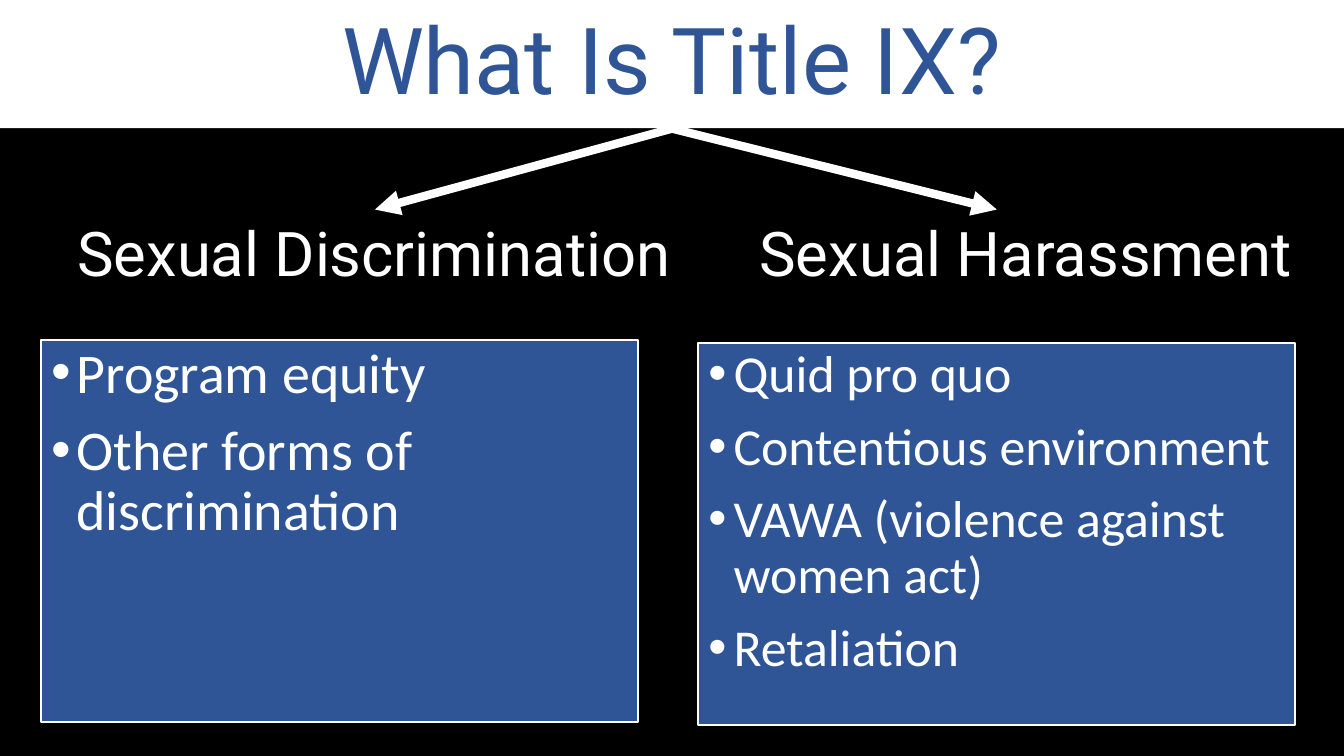
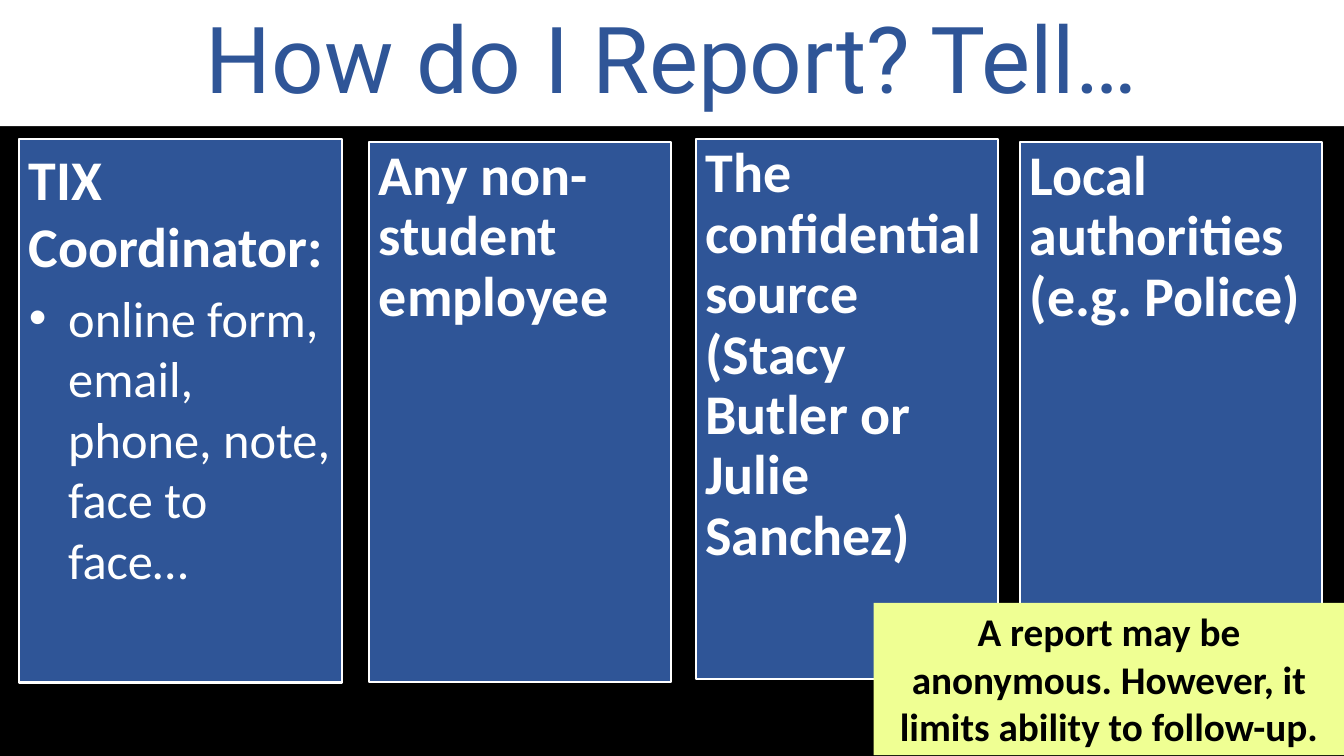
from pptx import Presentation
from pptx.dml.color import RGBColor
from pptx.enum.shapes import MSO_CONNECTOR, MSO_SHAPE
from pptx.enum.text import MSO_ANCHOR, PP_ALIGN
from pptx.oxml.ns import qn
from pptx.util import Cm, Pt
from lxml.etree import SubElement

BLACK = RGBColor(0x00, 0x00, 0x00)
WHITE = RGBColor(0xFF, 0xFF, 0xFF)
BLUE = RGBColor(0x2F, 0x55, 0x97)
LIME = RGBColor(0xEF, 0xFF, 0x93)
HEAD, BODY = "Roboto", "Calibri"
WIDE, HIGH = 33.87, 19.05

# Content: boxes are left, top, width, height in centimetres
TITLE = "What Is Title IX?"
TOPICS = [
    ("Sexual Discrimination", (1.27, 5.28, 16.33, 2.13), (9.45, 5.28),
     (1.04, 8.56, 15.04, 9.63), 40,
     ["Program equity", "Other forms of discrimination"]),
    ("Sexual Harassment", (18.59, 5.28, 14.53, 2.13), (25.12, 5.28),
     (17.6, 8.64, 15.04, 9.63), 37,
     ["Quid pro quo", "Contentious environment",
      "VAWA (violence against women act)", "Retaliation"]),
]
REPORT = "How do I Report? Tell…"
FIRST = "TIX Coordinator:"
WAYS = "online form, email, phone, note, face to face…"
PEOPLE = [
    (9.3, 3.58, "Any non-student employee"),
    (17.53, 3.51, "The confidential source (Stacy Butler or Julie Sanchez)"),
    (25.7, 3.58, "Local authorities (e.g. Police)"),
]
NOTE = "A report may be anonymous. However, it limits ability to follow-up."


def add_slide(deck):
    slide = deck.slides.add_slide(deck.slide_layouts[6])
    fill = slide.background.fill
    fill.solid()
    fill.fore_color.rgb = BLACK
    return slide


def add_box(slide, box, fill, edge=None):
    shape = slide.shapes.add_shape(MSO_SHAPE.RECTANGLE, *map(Cm, box))
    shape.shadow.inherit = False
    shape.fill.solid()
    shape.fill.fore_color.rgb = fill
    if edge is None:
        shape.line.fill.background()
    else:
        shape.line.color.rgb = edge
        shape.line.width = Pt(1.5)
    shape.text_frame.word_wrap = True
    shape.text_frame.vertical_anchor = MSO_ANCHOR.TOP
    return shape.text_frame


def add_text(frame, text, size, color=WHITE, font=BODY, bold=False,
             align=PP_ALIGN.LEFT, lead=0.9, after=0, hang=0):
    # The first paragraph of a new frame is still free
    para = frame.paragraphs[0]
    if para.runs:
        para = frame.add_paragraph()
    para.alignment = align
    para.line_spacing = lead
    para.space_after = Pt(after)
    run = para.add_run()
    run.text = text
    run.font.size = Pt(size)
    run.font.name = font
    run.font.bold = bold
    run.font.color.rgb = color
    if hang:
        props = para._p.get_or_add_pPr()
        props.set("marL", str(Cm(hang)))
        props.set("indent", str(-Cm(hang)))
        SubElement(props, qn("a:buFont")).set("typeface", "Arial")
        SubElement(props, qn("a:buChar")).set("char", "•")


def add_panel(slide, box):
    return add_box(slide, box, BLUE, WHITE)


def add_title(slide, text, high):
    frame = add_box(slide, (0, 0, WIDE, high), WHITE)
    frame.vertical_anchor = MSO_ANCHOR.MIDDLE
    add_text(frame, text, 66, BLUE, HEAD, align=PP_ALIGN.CENTER)


def add_arrow(slide, start, end):
    line = slide.shapes.add_connector(
        MSO_CONNECTOR.STRAIGHT, *map(Cm, start + end))
    line.line.color.rgb = WHITE
    line.line.width = Pt(6)
    SubElement(line.line._get_or_add_ln(), qn("a:tailEnd")).set(
        "type", "triangle")
    SubElement(line._element.spPr, qn("a:effectLst"))


def add_topics(deck):
    slide = add_slide(deck)
    for name, place, tip, box, size, items in TOPICS:
        panel = add_panel(slide, box)
        for item in items:
            add_text(panel, item, size, after=12, hang=0.64)
        label = slide.shapes.add_textbox(*map(Cm, place)).text_frame
        label.word_wrap = True
        add_text(label, name, 44, font=HEAD, align=PP_ALIGN.CENTER, lead=1.0)
        add_arrow(slide, (WIDE / 2, 3.24), tip)
    add_title(slide, TITLE, 3.23)


def add_report(deck):
    slide = add_slide(deck)
    # Coordinator panel
    panel = add_panel(slide, (0.48, 3.51, 8.13, 13.69))
    add_text(panel, FIRST, 40, bold=True, lead=1.0, after=6)
    add_text(panel, WAYS, 36, lead=1.0, after=6, hang=0.99)
    # Other people to tell
    for left, top, text in PEOPLE:
        panel = add_panel(slide, (left, top, 7.62, 13.61))
        add_text(panel, text, 40, bold=True, after=12)
    add_title(slide, REPORT, 3.18)
    # Note in the corner
    note = add_box(slide, (22.02, 15.19, WIDE - 22.02, 3.84), LIME)
    add_text(note, NOTE, 28, BLACK, bold=True, align=PP_ALIGN.CENTER, lead=1.0)


def main():
    deck = Presentation()
    deck.slide_width, deck.slide_height = Cm(WIDE), Cm(HIGH)
    add_topics(deck)
    add_report(deck)
    deck.save("out.pptx")


if __name__ == "__main__":
    main()
